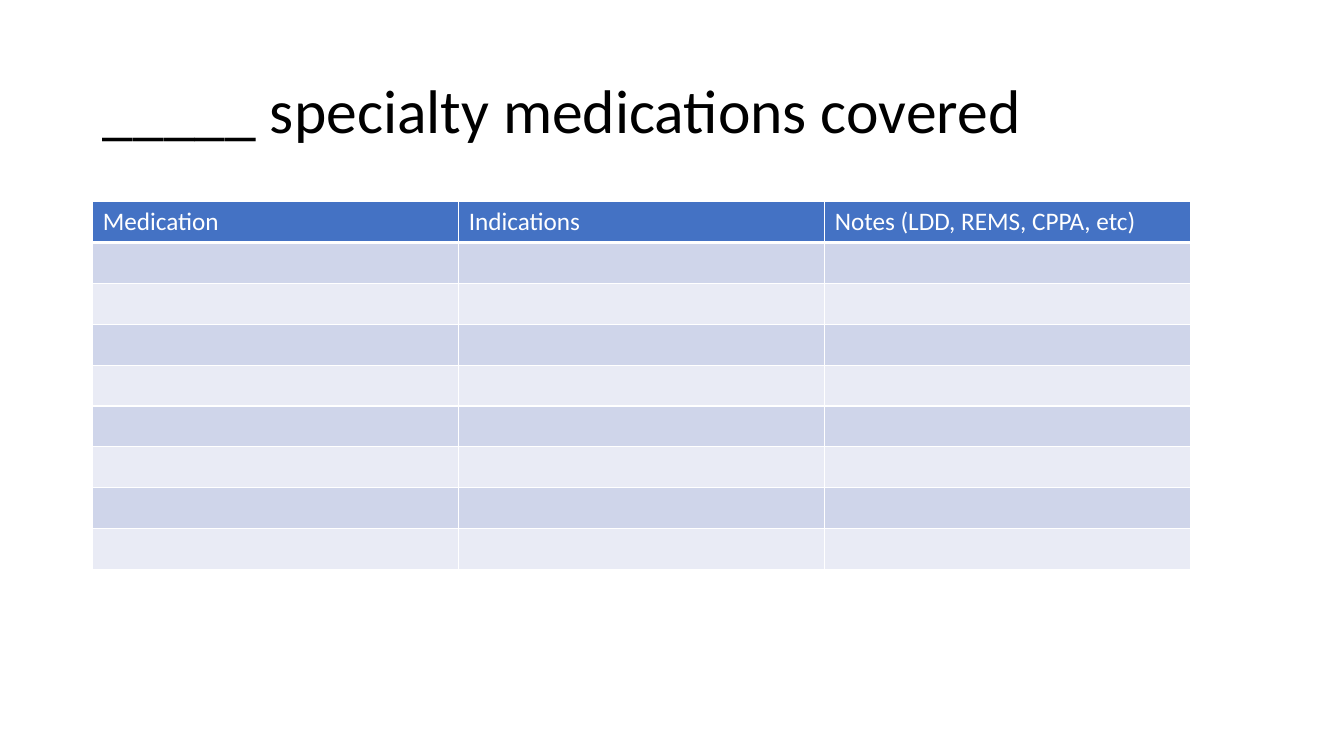
from lxml import etree
from pptx import Presentation
from pptx.dml.color import RGBColor
from pptx.enum.text import MSO_ANCHOR
from pptx.oxml.ns import qn
from pptx.util import Pt

EMU_PER_PX = 9144
MIDDLE = MSO_ANCHOR.MIDDLE
FONT = "Calibri"
BLACK, WHITE, BLUE = "000000", "FFFFFF", "4472C4"
BANDS = ("E9EBF5", "CFD5EA")
HEADINGS = ("Medication", "Indications", "Notes (LDD, REMS, CPPA, etc)")
ROW_COUNT = 9


def px(length):
    return int(length * EMU_PER_PX)


def color(value):
    return RGBColor.from_string(value)


def style_text(para, size, value):
    for span in para.runs:
        span.font.name = FONT
        span.font.size = Pt(size)
        span.font.bold = False
        span.font.color.rgb = color(value)


def add_title(page, left, top, width, height):
    box = page.shapes.add_textbox(px(left), px(top), px(width), px(height))
    frame = box.text_frame
    frame.word_wrap = True
    frame.vertical_anchor = MIDDLE
    frame.text = "_____ specialty medications covered"
    para = frame.paragraphs[0]
    para.line_spacing = 0.9
    style_text(para, 44, BLACK)


def add_borders(cell, widths):
    properties = cell._tc.get_or_add_tcPr()
    for side, width in widths.items():
        line = etree.SubElement(properties, qn(f"a:ln{side}"), w=str(Pt(width)))
        fill = etree.SubElement(line, qn("a:solidFill"))
        etree.SubElement(fill, qn("a:srgbClr"), val=WHITE)


def add_medication_table(page, left, top, width, height):
    table = page.shapes.add_table(
        ROW_COUNT, len(HEADINGS), px(left), px(top), px(width), px(height)
    ).table
    for row_index, row in enumerate(table.rows):
        is_header = row_index == 0
        top_width = 3 if row_index == 1 else 1
        bottom_width = 3 if is_header else 1
        for cell, heading in zip(row.cells, HEADINGS):
            add_borders(cell, {"L": 1, "R": 1, "T": top_width, "B": bottom_width})
            cell.fill.solid()
            cell.fill.fore_color.rgb = color(BLUE if is_header else BANDS[row_index % 2])
            if is_header:
                cell.text_frame.text = heading
                style_text(cell.text_frame.paragraphs[0], 18, WHITE)


def main():
    deck = Presentation()
    deck.slide_width = px(1333)
    deck.slide_height = px(750)
    page = deck.slides.add_slide(deck.slide_layouts[6])
    add_title(page, 92, 40, 1150, 145)
    add_medication_table(page, 92, 200, 1089, 365)
    deck.save("out.pptx")


if __name__ == "__main__":
    main()
